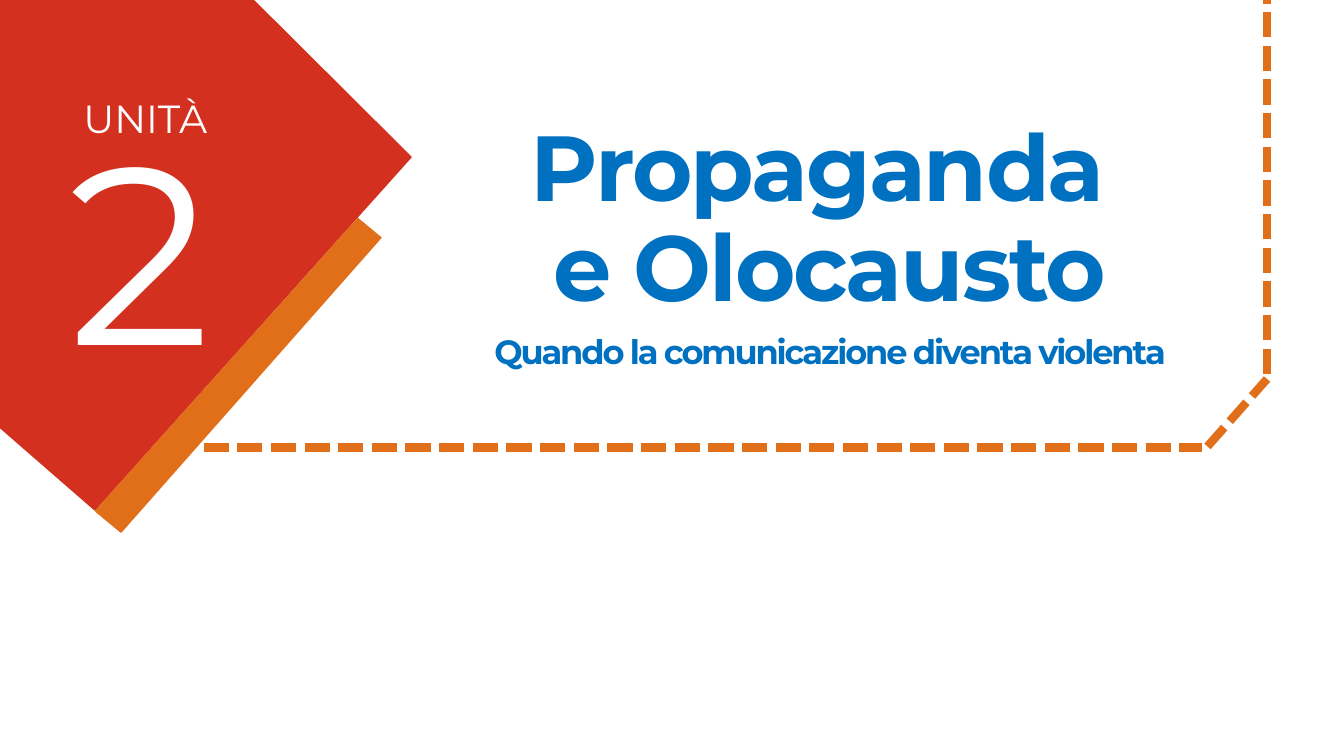
"""Build the opening slide of unit 2, Propaganda e Olocausto."""
from dataclasses import dataclass

import pptx
import pptx.dml.color
import pptx.enum.dml
import pptx.enum.text
import pptx.oxml
import pptx.shapes.connector
import pptx.slide
import pptx.text.text
import pptx.util
from pptx.util import Cm

COLORS = {"red": "D3301F", "orange": "E16F19", "blue": "0070C0", "white": "FFFFFF"}
Point = tuple[float, float]


@dataclass(frozen=True)
class Panel:
    color: str
    corners: tuple[Point, ...]


@dataclass(frozen=True)
class Dash:
    start: Point
    end: Point


@dataclass(frozen=True)
class Label:
    text: str
    size: float
    left: float
    top: float
    width: float
    height: float


PANELS = (
    Panel("red", ((0, 10.77), (0, 0), (6.38, 0), (10.36, 3.96), (2.39, 12.85))),
    Panel("orange", ((2.41, 12.88), (9.02, 5.51), (9.6, 5.99), (3.05, 13.41))),
)
FRAME = (
    Dash((5.13, 11.28), (30.28, 11.28)),
    Dash((30.43, 11.25), (31.93, 9.55)),
    Dash((31.93, 9.42), (31.93, 0)),
)
UNIT_LABELS = (
    Label("UNITÀ", 28, 1.85, 2.24, 4.34, 1.45),
    Label("2", 180, 1.47, 2.24, 4.72, 7.95),
)


def rgb(color: str) -> pptx.dml.color.RGBColor:
    return pptx.dml.color.RGBColor.from_string(COLORS[color])


def write(paragraph: pptx.text.text._Paragraph, text: str, *, size: float,
          color: str, bold: bool = False, spacing: float = 0) -> None:
    paragraph.text = text
    for run in paragraph.runs:
        run.font.name = "Montserrat"
        run.font.size = pptx.util.Pt(size)
        run.font.bold = bold
        run.font.color.rgb = rgb(color)
        if spacing:
            run._r.get_or_add_rPr().set("spc", str(round(spacing * 100)))


def add_heading(slide: pptx.slide.Slide) -> None:
    heading = slide.shapes.title
    heading.left, heading.top = Cm(10.69), Cm(2.95)
    heading.width, heading.height = Cm(20.45), Cm(5.66)
    frame = heading.text_frame
    frame.word_wrap = True
    frame.auto_size = pptx.enum.text.MSO_AUTO_SIZE.NONE
    frame.vertical_anchor = pptx.enum.text.MSO_ANCHOR.TOP
    name, subtitle = frame.paragraphs[0], frame.add_paragraph()
    write(name, "Propaganda \ve Olocausto", size=66, color="blue", bold=True, spacing=-1.5)
    write(subtitle, "Quando la comunicazione diventa violenta",
          size=24, color="blue", bold=True, spacing=-1.5)
    subtitle.space_before = pptx.util.Pt(10)
    for paragraph in (name, subtitle):
        paragraph.alignment = pptx.enum.text.PP_ALIGN.CENTER
        paragraph.line_spacing = 0.9


def add_panel(slide: pptx.slide.Slide, panel: Panel) -> None:
    first, *others = [(Cm(x), Cm(y)) for x, y in panel.corners]
    builder = slide.shapes.build_freeform(*first)
    builder.add_line_segments(others, close=True)
    outline = builder.convert_to_shape()
    outline.shadow.inherit = False
    outline.fill.solid()
    outline.fill.fore_color.rgb = rgb(panel.color)
    outline.line.color.rgb = rgb(panel.color)
    outline.line.width = pptx.util.Pt(1)


def add_label(slide: pptx.slide.Slide, label: Label) -> None:
    box = slide.shapes.add_textbox(
        Cm(label.left), Cm(label.top), Cm(label.width), Cm(label.height))
    box.text_frame.word_wrap = True
    write(box.text_frame.paragraphs[0], label.text, size=label.size, color="white")


def add_dash(slide: pptx.slide.Slide, dash: Dash) -> None:
    line = slide.shapes.add_connector(
        pptx.enum.shapes.MSO_CONNECTOR.STRAIGHT,
        *(Cm(value) for value in dash.start + dash.end))
    line.line.color.rgb = rgb("orange")
    line.line.width = pptx.util.Pt(6)
    line.line.dash_style = pptx.enum.dml.MSO_LINE.SQUARE_DOT
    line._element.spPr.append(pptx.oxml.parse_xml(
        '<a:effectLst xmlns:a="http://schemas.openxmlformats.org/drawingml/2006/main"/>'))


def main() -> None:
    deck = pptx.Presentation()
    deck.slide_width, deck.slide_height = Cm(33.87), Cm(19.05)
    slide = deck.slides.add_slide(deck.slide_layouts[5])
    add_heading(slide)
    for panel in PANELS:
        add_panel(slide, panel)
    for label in UNIT_LABELS:
        add_label(slide, label)
    for dash in FRAME:
        add_dash(slide, dash)
    deck.save("out.pptx")


if __name__ == "__main__":
    main()
